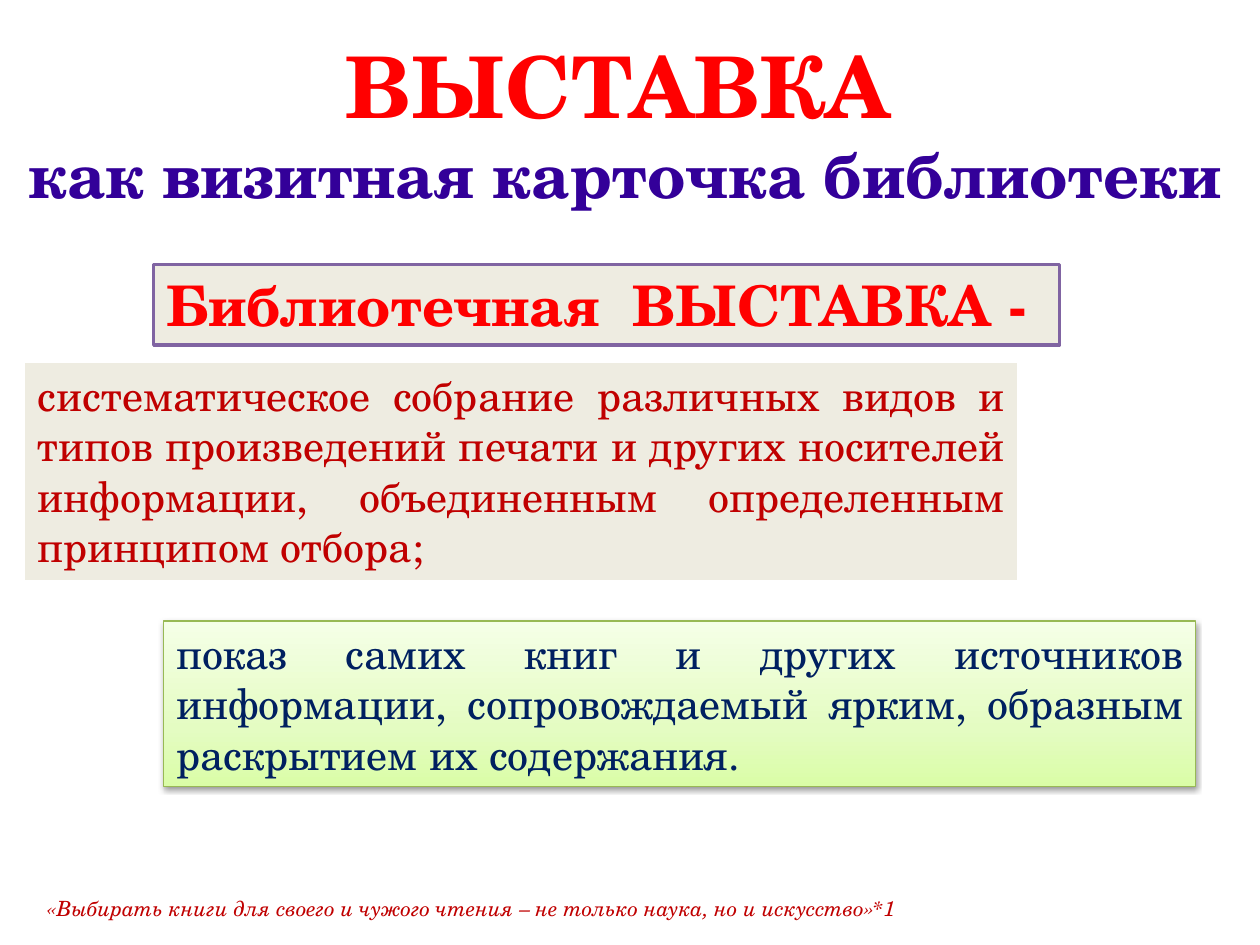
from copy import deepcopy

from lxml import etree
from pptx import Presentation
from pptx.dml.color import RGBColor
from pptx.enum.shapes import MSO_SHAPE
from pptx.enum.text import MSO_ANCHOR, PP_ALIGN
from pptx.oxml.ns import qn
from pptx.util import Cm, Pt

RECTANGLE = MSO_SHAPE.RECTANGLE
TOP, MIDDLE = MSO_ANCHOR.TOP, MSO_ANCHOR.MIDDLE
LEFT, CENTER, JUSTIFY = PP_ALIGN.LEFT, PP_ALIGN.CENTER, PP_ALIGN.JUSTIFY

FONT = "TeX Gyre Schola"
RED, DARK_RED, VIOLET, NAVY = "FF0000", "C00000", "330099", "002060"
BEIGE, PURPLE, GREEN = "EEECE1", "8064A2", "98B955"
GREEN_STOPS = [(0, "DAFDA7"), (0.35, "E4FCC2"), (1, "F5FFE7")]


def rgb(color):
    return RGBColor.from_string(color)


def add_run(paragraph, text, size, color, bold=False, italic=False):
    run = paragraph.add_run()
    run.text = text
    font = run.font
    font.name, font.size = FONT, Pt(size)
    font.bold, font.italic = bold, italic
    font.color.rgb = rgb(color)


def prepare_text(shape, alignment, anchor=TOP):
    """Set up the text frame and return its first paragraph."""
    frame = shape.text_frame
    frame.word_wrap = True
    frame.vertical_anchor = anchor
    paragraph = frame.paragraphs[0]
    paragraph.alignment = alignment
    return paragraph


def add_text_box(slide, left, top, width, height, alignment, anchor=TOP):
    box = slide.shapes.add_textbox(Cm(left), Cm(top), Cm(width), Cm(height))
    return prepare_text(box, alignment, anchor)


def add_panel(slide, left, top, width, height, line=None, line_width=0):
    panel = slide.shapes.add_shape(RECTANGLE, Cm(left), Cm(top), Cm(width), Cm(height))
    panel.shadow.inherit = False
    panel.fill.solid()
    panel.fill.fore_color.rgb = rgb(BEIGE)
    if line:
        panel.line.color.rgb = rgb(line)
        panel.line.width = Pt(line_width)
    else:
        panel.line.fill.background()
    return panel


def set_gradient(shape, stops):
    """Fill from bottom to top with three colour stops."""
    fill = shape.fill
    fill.gradient()
    fill.gradient_angle = 90
    first_stop = shape._element.spPr.find(".//" + qn("a:gs"))
    first_stop.addnext(deepcopy(first_stop))
    for stop, (position, color) in zip(fill.gradient_stops, stops):
        stop.position = position
        stop.color.rgb = rgb(color)


def add_shadow(shape):
    effects = shape._element.spPr.find(qn("a:effectLst"))
    shadow = etree.SubElement(effects, qn("a:outerShdw"), blurRad=str(Pt(3.1)),
                              dist=str(Pt(1.6)), dir="5400000", rotWithShape="0")
    color = etree.SubElement(shadow, qn("a:srgbClr"), val="000000")
    etree.SubElement(color, qn("a:alpha"), val="38000")


def main():
    presentation = Presentation()
    presentation.slide_width, presentation.slide_height = Cm(25.4), Cm(19.05)
    slide = presentation.slides.add_slide(presentation.slide_layouts[6])

    # Title
    title = add_text_box(slide, 0.3, 0, 24.61, 4.93, CENTER, MIDDLE)
    add_run(title, "ВЫСТАВКА", 48.6, RED, bold=True)
    add_run(title, " ", 28.8, VIOLET, bold=True)
    title.add_line_break()
    add_run(title, "как визитная карточка библиотеки", 36, VIOLET, bold=True)

    # Term being defined
    term = prepare_text(add_panel(slide, 3.1, 5.33, 18.26, 1.63, PURPLE, 2), LEFT)
    add_run(term, "Библиотечная  ВЫСТАВКА -", 32, RED, bold=True)

    # First definition
    collection = prepare_text(add_panel(slide, 0.51, 7.32, 19.99, 4.37), JUSTIFY)
    add_run(collection, "систематическое собрание различных видов и типов произведений "
            "печати и других носителей информации, объединенным определенным "
            "принципом отбора;", 24, DARK_RED)

    # Second definition
    display_panel = add_panel(slide, 3.3, 12.52, 20.8, 3.33, GREEN, 0.75)
    set_gradient(display_panel, GREEN_STOPS)
    add_shadow(display_panel)
    display = prepare_text(display_panel, JUSTIFY)
    add_run(display, "показ самих книг и других источников информации, "
            "сопровождаемый ярким, образным раскрытием их содержания.", 24, NAVY)

    # Quotation
    quotation = add_text_box(slide, 0.71, 17.93, 24, 0.76, LEFT)
    add_run(quotation, "«Выбирать книги для своего и чужого чтения – не только наука, "
            "но и искусство»*1", 12, DARK_RED, italic=True)

    presentation.save("out.pptx")


if __name__ == "__main__":
    main()
